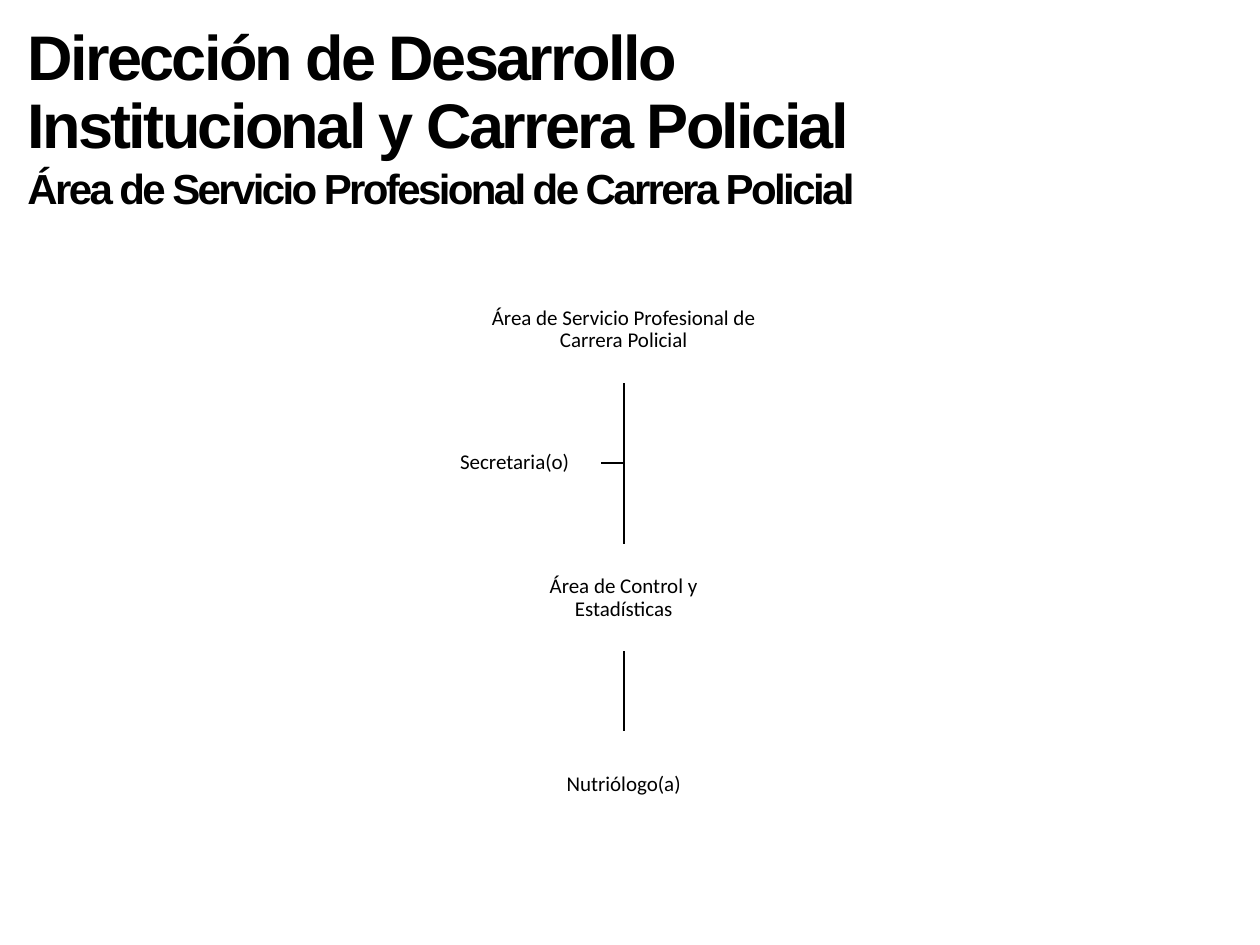
from pptx import Presentation
from pptx.dml.color import RGBColor
from pptx.enum import shapes, text
from pptx.oxml import xmlchemy
from pptx.util import Inches, Pt

COLOURS = {"ink": "000000", "paper": "FFFFFF"}
TITLE_LINES = [
    ("Dirección de Desarrollo Institucional y Carrera Policial", 36, 0.9),
    ("Área de Servicio Profesional de Carrera Policial", 24, 1.0),
]
POSITION_FONT = {"name": "Calibri", "size": Pt(12)}
TITLE_FONT = {"name": "Arial", "bold": True}
TOP, BOTTOM = 0, 2


def colour(key):
    """Return a palette colour."""
    return RGBColor.from_string(COLOURS[key])


def apply_format(target, values):
    """Set each attribute named in a dict of format values."""
    for name, value in values.items():
        setattr(target, name, value)


def add_heading(slide, left, top, width, height):
    """Write the department and area names in the given box."""
    heading = slide.shapes.add_textbox(*map(Inches, (left, top, width, height)))
    frame = heading.text_frame
    frame.word_wrap = True
    for index, (wording, size, spacing) in enumerate(TITLE_LINES):
        paragraph = frame.add_paragraph() if index else frame.paragraphs[0]
        paragraph.line_spacing = spacing
        run = paragraph.add_run()
        run.text = wording
        apply_format(run.font, {**TITLE_FONT, "size": Pt(size)})
        run.font.color.rgb = colour("ink")
        run.font._element.set("spc", "-150")


def add_position(slide, wording, left, top, width, height):
    """Draw one position of the chart as a plain box with centred text."""
    position = slide.shapes.add_shape(
        shapes.MSO_SHAPE.RECTANGLE, *map(Inches, (left, top, width, height)))
    position.shadow.inherit = False
    position.fill.solid()
    position.fill.fore_color.rgb = colour("paper")
    position.line.fill.background()
    frame = position.text_frame
    margins = {f"margin_{side}": Inches(0.01)
               for side in ("left", "top", "right", "bottom")}
    apply_format(frame, {**margins, "word_wrap": True,
                         "vertical_anchor": text.MSO_ANCHOR.MIDDLE})
    paragraph = frame.paragraphs[0]
    apply_format(paragraph, {"alignment": text.PP_ALIGN.CENTER, "line_spacing": 0.9})
    run = paragraph.add_run()
    run.text = wording
    apply_format(run.font, POSITION_FONT)
    run.font.color.rgb = colour("ink")
    return position


def style_line(line):
    """Give a link its thin dark stroke."""
    line.width = Pt(1)
    line.color.rgb = colour("ink")


def add_chain(slide, upper, lower):
    """Join the bottom of one position to the top of the next."""
    centre = upper.left + upper.width // 2
    link = slide.shapes.add_connector(
        shapes.MSO_CONNECTOR.STRAIGHT,
        centre, upper.top + upper.height, centre, lower.top)
    style_line(link.line)
    link._element.spPr.append(xmlchemy.OxmlElement("a:effectLst"))
    link.begin_connect(upper, BOTTOM)
    link.end_connect(lower, TOP)


def add_branch(slide, head, assistant):
    """Draw the bent line from a head down and across to an assistant."""
    centre = head.left + head.width // 2
    middle = assistant.top + assistant.height // 2
    builder = slide.shapes.build_freeform(centre, head.top + head.height)
    builder.add_line_segments(
        [(centre, middle), (assistant.left + assistant.width, middle)], close=False)
    branch = builder.convert_to_shape()
    branch.shadow.inherit = False
    branch.fill.background()
    style_line(branch.line)


def add_organigram(slide, left, top, width, height):
    """Place the chain of positions and the assistant in the given box."""
    row = 0.85
    centre = left + width - 1.18
    last_top = top + height - row
    area = add_position(slide, "Área de Servicio Profesional de Carrera Policial",
                        centre - 1.18, top, 2.36, row)
    control = add_position(slide, "Área de Control y Estadísticas",
                           centre - 0.85, last_top - 1.48, 1.7, row)
    nutritionist = add_position(slide, "Nutriólogo(a)",
                                centre - 0.85, last_top, 1.7, row)
    secretary = add_position(slide, "Secretaria(o)", left, top + 1.19, 1.37, 0.59)
    add_branch(slide, area, secretary)
    add_chain(slide, control, nutritionist)
    add_chain(slide, area, control)


def main():
    """Build the slide and save it."""
    deck = Presentation()
    deck.slide_width, deck.slide_height = Inches(10), Inches(7.5)
    slide = deck.slides.add_slide(deck.slide_layouts[6])
    add_organigram(slide, 3.4, 2.19, 2.73, 4.46)
    add_heading(slide, 0.12, 0.16, 7.46, 1.6)
    deck.save("out.pptx")


if __name__ == "__main__":
    main()
